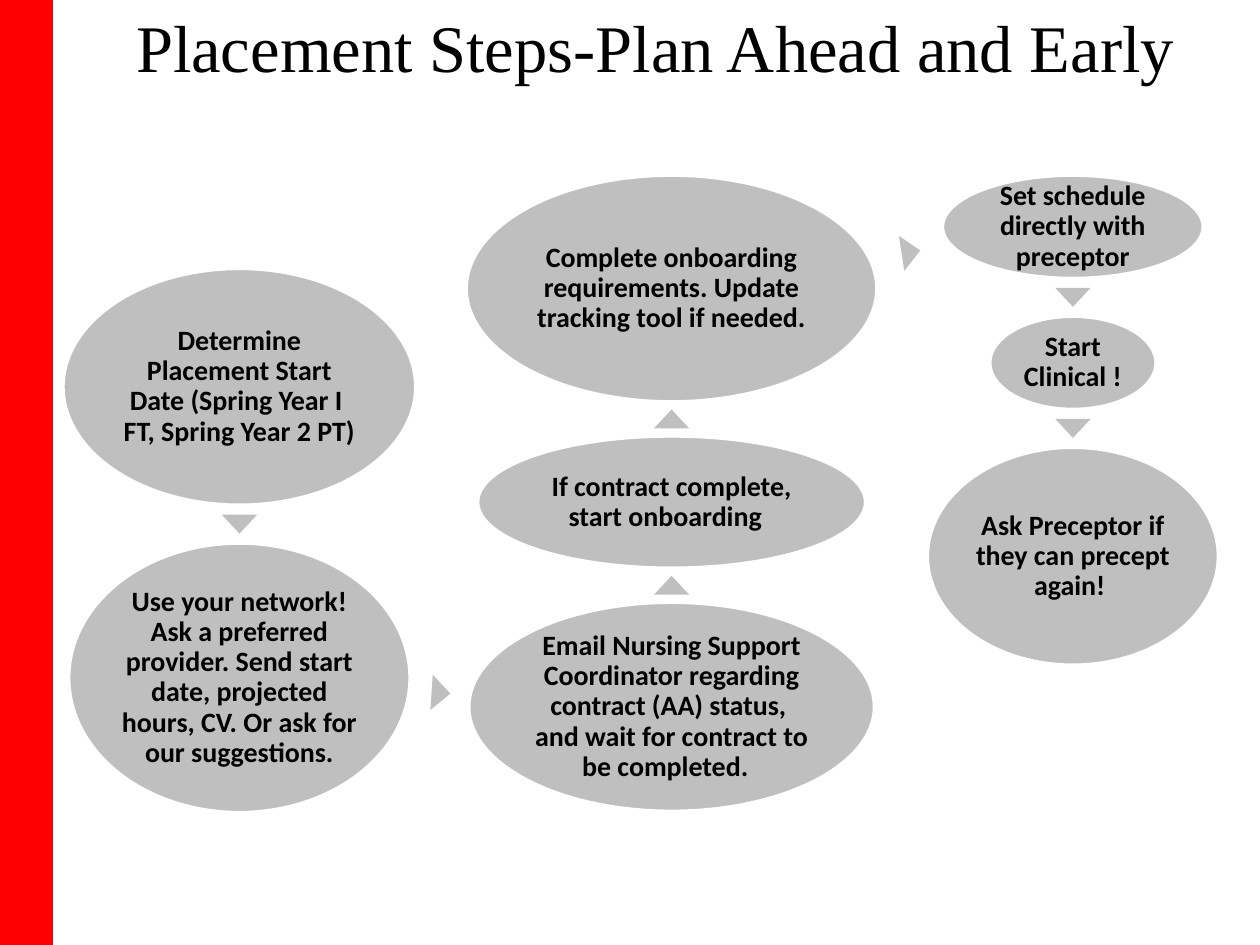
from pptx import Presentation
from pptx.dml.color import RGBColor
from pptx.enum.shapes import MSO_SHAPE
from pptx.enum.text import MSO_ANCHOR, MSO_AUTO_SIZE, PP_ALIGN
from pptx.util import Inches, Pt

ELLIPSE, TRIANGLE = MSO_SHAPE.OVAL, MSO_SHAPE.ISOSCELES_TRIANGLE
RECTANGLE = MSO_SHAPE.RECTANGLE
TOP, MIDDLE = MSO_ANCHOR.TOP, MSO_ANCHOR.MIDDLE
LEFT, CENTER = PP_ALIGN.LEFT, PP_ALIGN.CENTER
TITLE_ONLY = 5

COLORS = {"band": "FF0000", "step": "BFBFBF", "outline": "FFFFFF", "text": "000000"}

# The slide is a grid of 100 columns by 75 rows
WIDTH, HEIGHT = Inches(10), Inches(7.5)
COLUMN, ROW = WIDTH / 100, HEIGHT / 75
ARROW_WIDTH, ARROW_HEIGHT = 2.8, 1.5
UP, DOWN = 0, 180

# Each flow column: box (left, top, width, height), arrow direction,
# and its steps from top to bottom as (width, height, text)
FLOW_COLUMNS = [
    ((5, 21.3, 28, 43.2), DOWN, [
        (28, 18.8, "Determine Placement Start Date (Spring Year I  FT, Spring Year 2 PT)"),
        (27.1, 21.4, "Use your network! Ask a preferred provider. Send start date, "
                     "projected hours, CV. Or ask for our suggestions."),
    ]),
    ((37, 13.9, 32.6, 50.5), UP, [
        (32.6, 18, "Complete onboarding requirements. Update tracking tool if needed."),
        (30.8, 10.5, "If contract complete, start onboarding  "),
        (32.2, 16.6, "Email Nursing Support Coordinator regarding contract (AA) status,  "
                     "and wait for contract to be completed.  "),
    ]),
    ((73.6, 13.9, 23.1, 38.9), DOWN, [
        (20.7, 8.2, "Set schedule directly with preceptor"),
        (13.2, 7.4, "Start Clinical !"),
        (23.1, 17.3, "Ask Preceptor if they can precept again! "),
    ]),
]
# Arrows from one column to the next: centre and rotation
CROSS_ARROWS = [(35, 55, 94), (72.3, 20, 81.3)]


def color(name):
    return RGBColor.from_string(COLORS[name])


def grid_box(left, top, width, height):
    return [round(length) for length in
            (left * COLUMN, top * ROW, width * COLUMN, height * ROW)]


def add_filled(slide, kind, box, fill):
    shape = slide.shapes.add_shape(kind, *grid_box(*box))
    shape.shadow.inherit = False
    shape.fill.solid()
    shape.fill.fore_color.rgb = color(fill)
    shape.line.fill.background()
    return shape


def write(shape, text, font, size, bold, align, anchor, inset):
    frame = shape.text_frame
    frame.text = text
    frame.word_wrap = True
    frame.auto_size = MSO_AUTO_SIZE.NONE
    frame.vertical_anchor = anchor
    frame.margin_left = frame.margin_right = Inches(inset)
    frame.margin_top = frame.margin_bottom = Inches(inset)
    paragraph = frame.paragraphs[0]
    paragraph.alignment = align
    paragraph.line_spacing = 0.9 if bold else 1.0
    run_font = paragraph.runs[0].font
    run_font.name, run_font.size, run_font.bold = font, Pt(size), bold
    run_font.color.rgb = color("text")


def add_title(slide, box, text):
    title = slide.shapes.title
    title.left, title.top, title.width, title.height = grid_box(*box)
    write(title, text, "Times New Roman", 38, False, LEFT, TOP, 0)


def add_arrow(slide, center_x, center_y, rotation):
    box = (center_x - ARROW_WIDTH / 2, center_y - ARROW_HEIGHT / 2,
           ARROW_WIDTH, ARROW_HEIGHT)
    add_filled(slide, TRIANGLE, box, "step").rotation = rotation


def add_flow_column(slide, box, direction, steps):
    """Stack the steps with equal gaps and an arrow in each gap."""
    left, top, width, height = box
    center = left + width / 2
    gap = (height - sum(step[1] for step in steps)) / (len(steps) - 1)
    for index, (step_width, step_height, text) in enumerate(steps):
        if index:
            add_arrow(slide, center, top - gap / 2, direction)
        ellipse = add_filled(
            slide, ELLIPSE, (center - step_width / 2, top, step_width, step_height), "step")
        ellipse.line.color.rgb = color("outline")
        ellipse.line.width = Pt(2)
        write(ellipse, text, "Calibri", 16, True, CENTER, MIDDLE, 0.02)
        top += step_height + gap


def main():
    presentation = Presentation()
    presentation.slide_width, presentation.slide_height = WIDTH, HEIGHT
    slide = presentation.slides.add_slide(presentation.slide_layouts[TITLE_ONLY])

    # Side band and title
    add_filled(slide, RECTANGLE, (0, 0, 4.2, 75), "band")
    add_title(slide, (10.8, 0.5, 87.5, 13), "Placement Steps-Plan Ahead and Early")

    # Placement flow
    for box, direction, steps in FLOW_COLUMNS:
        add_flow_column(slide, box, direction, steps)
    for center_x, center_y, rotation in CROSS_ARROWS:
        add_arrow(slide, center_x, center_y, rotation)

    presentation.save("out.pptx")


if __name__ == "__main__":
    main()
